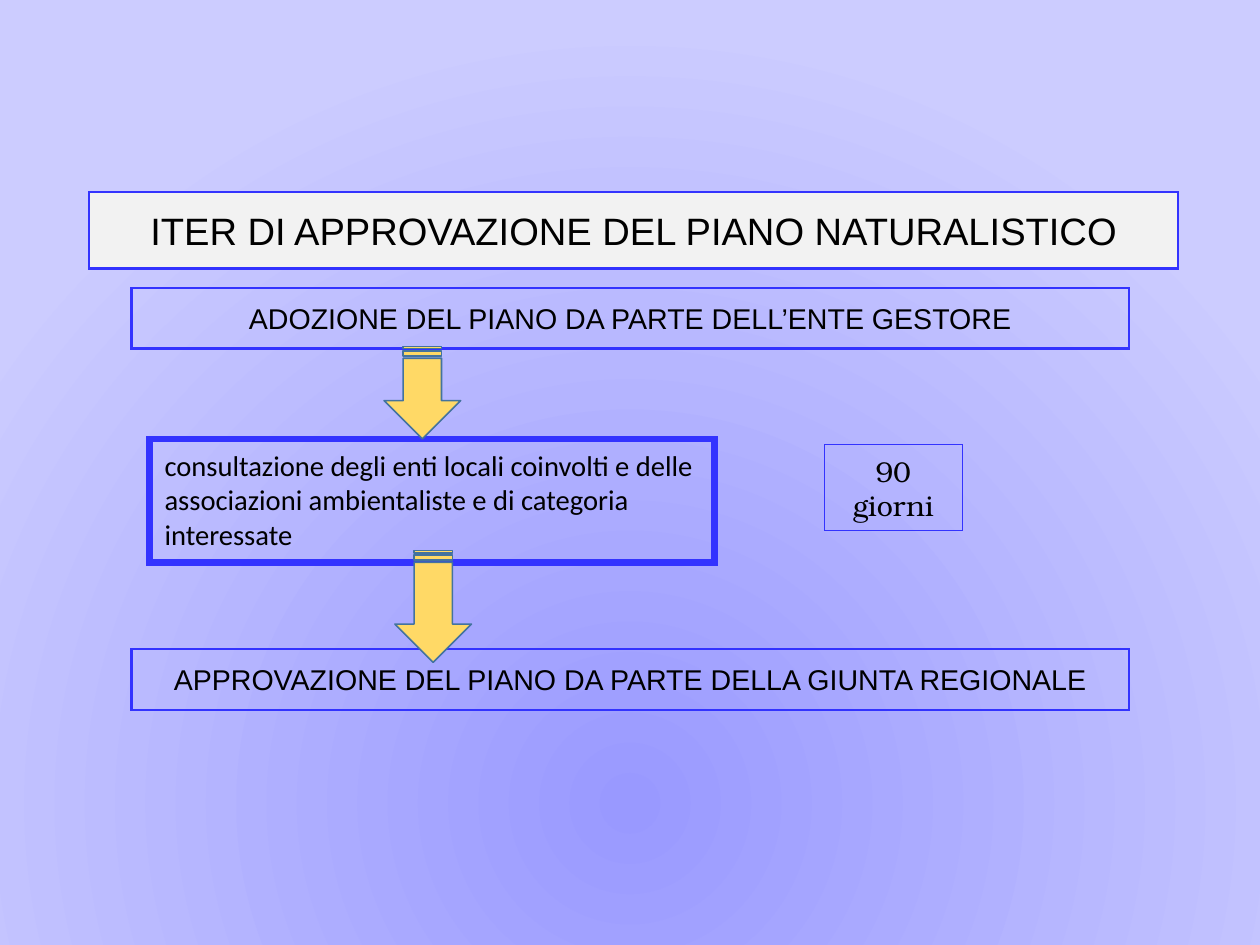
from dataclasses import dataclass

from lxml import etree
from pptx import Presentation
from pptx.dml.color import RGBColor
from pptx.enum.shapes import MSO_SHAPE
from pptx.enum.text import MSO_ANCHOR, MSO_AUTO_SIZE, PP_ALIGN
from pptx.oxml.ns import qn
from pptx.shapes.autoshape import Shape
from pptx.slide import Slide
from pptx.util import Inches, Pt

BLACK = RGBColor(0x00, 0x00, 0x00)
BLUE = RGBColor(0x33, 0x33, 0xFF)
LIGHT_GREY = RGBColor(0xF2, 0xF2, 0xF2)
ARROW_FILL = RGBColor(0xFF, 0xD9, 0x66)
ARROW_LINE = RGBColor(0x43, 0x73, 0x9E)
GLOW_CENTRE = RGBColor(0x99, 0x99, 0xFF)
GLOW_EDGE = RGBColor(0xCC, 0xCC, 0xFF)

LEFT, CENTER = PP_ALIGN.LEFT, PP_ALIGN.CENTER
TOP, MIDDLE = MSO_ANCHOR.TOP, MSO_ANCHOR.MIDDLE
FIXED, GROW = MSO_AUTO_SIZE.NONE, MSO_AUTO_SIZE.SHAPE_TO_FIT_TEXT
STRIPED_ARROW = MSO_SHAPE.STRIPED_RIGHT_ARROW
TITLE_ONLY = 5

CM_PER_INCH = 2.54
SLIDE_WIDTH_CM, SLIDE_HEIGHT_CM = 28, 21
STEP_LEFT, STEP_WIDTH, STEP_HEIGHT = 1.15, 8.73, 0.53
ARROW_THICKNESS = 0.67


@dataclass(frozen=True)
class Box:
    text: str
    left: float
    top: float
    width: float
    height: float
    font: str = "Arial"
    size: float = 18
    line_width: float = 1.42
    align: PP_ALIGN = CENTER
    anchor: MSO_ANCHOR = MIDDLE
    auto_size: MSO_AUTO_SIZE = FIXED
    margin_x: float = 0.01
    margin_y: float = 0.01


@dataclass(frozen=True)
class Arrow:
    left: float
    top: float
    length: float


TITLE = Box("ITER DI APPROVAZIONE DEL PIANO NATURALISTICO",
            0.78, 1.68, 9.53, 0.67, size=24)
BOXES = [
    Box("ADOZIONE DEL PIANO DA PARTE DELL’ENTE GESTORE",
        STEP_LEFT, 2.52, STEP_WIDTH, STEP_HEIGHT),
    Box("consultazione degli enti locali coinvolti e delle "
        "associazioni ambientaliste e di categoria interessate",
        1.31, 3.84, 4.94, 1.08, font="Calibri", line_width=4.25, align=LEFT,
        anchor=TOP, auto_size=GROW, margin_x=0.13, margin_y=0.08),
    Box("90 giorni", 7.21, 3.89, 1.21, 0.75, font="TeX Gyre Bonum",
        line_width=0.25, anchor=TOP, auto_size=GROW,
        margin_x=0.13, margin_y=0.08),
    Box("APPROVAZIONE DEL PIANO DA PARTE DELLA GIUNTA REGIONALE",
        STEP_LEFT, 5.68, STEP_WIDTH, STEP_HEIGHT),
]
ARROWS = [Arrow(3.29, 3.1, 0.81), Arrow(3.3, 4.97, 0.98)]


def paint_background(slide: Slide) -> None:
    """Fill the background with a circular gradient centred low on the slide."""
    fill = slide.background.fill
    fill.gradient()
    for stop, position, color in zip(fill.gradient_stops, (0, 1),
                                     (GLOW_CENTRE, GLOW_EDGE)):
        stop.position = position
        stop.color.rgb = color
    gradient = slide.element.find(".//" + qn("a:gradFill"))
    gradient.remove(gradient.find(qn("a:lin")))
    circle = etree.SubElement(gradient, qn("a:path"), path="circle")
    etree.SubElement(circle, qn("a:fillToRect"),
                     l="50000", t="85000", r="50000", b="15000")


def format_box(shape: Shape, box: Box) -> None:
    shape.left, shape.top = Inches(box.left), Inches(box.top)
    shape.width, shape.height = Inches(box.width), Inches(box.height)
    shape.line.color.rgb = BLUE
    shape.line.width = Pt(box.line_width)
    outline = shape.element.spPr.find(qn("a:ln"))
    etree.SubElement(outline, qn("a:miter"), lim="800000")
    frame = shape.text_frame
    frame.word_wrap = True
    frame.auto_size = box.auto_size
    frame.vertical_anchor = box.anchor
    frame.margin_left = frame.margin_right = Inches(box.margin_x)
    frame.margin_top = frame.margin_bottom = Inches(box.margin_y)
    paragraph = frame.paragraphs[0]
    paragraph.alignment = box.align
    run = paragraph.add_run()
    run.text = box.text
    run.font.name = box.font
    run.font.size = Pt(box.size)
    run.font.color.rgb = BLACK


def add_box(slide: Slide, box: Box) -> None:
    shape = slide.shapes.add_textbox(Inches(box.left), Inches(box.top),
                                     Inches(box.width), Inches(box.height))
    format_box(shape, box)


def add_down_arrow(slide: Slide, arrow: Arrow) -> None:
    shape = slide.shapes.add_shape(STRIPED_ARROW, Inches(arrow.left), Inches(arrow.top),
                                   Inches(arrow.length), Inches(ARROW_THICKNESS))
    shape.rotation = 90
    shape.shadow.inherit = False
    shape.fill.solid()
    shape.fill.fore_color.rgb = ARROW_FILL
    shape.line.color.rgb = ARROW_LINE
    shape.line.width = Pt(1)


def main() -> None:
    presentation = Presentation()
    presentation.slide_width = Inches(SLIDE_WIDTH_CM / CM_PER_INCH)
    presentation.slide_height = Inches(SLIDE_HEIGHT_CM / CM_PER_INCH)
    slide = presentation.slides.add_slide(presentation.slide_layouts[TITLE_ONLY])
    paint_background(slide)

    title = slide.shapes.title
    format_box(title, TITLE)
    title.fill.solid()
    title.fill.fore_color.rgb = LIGHT_GREY
    for box in BOXES:
        add_box(slide, box)
    for arrow in ARROWS:
        add_down_arrow(slide, arrow)

    presentation.save("out.pptx")


if __name__ == "__main__":
    main()
